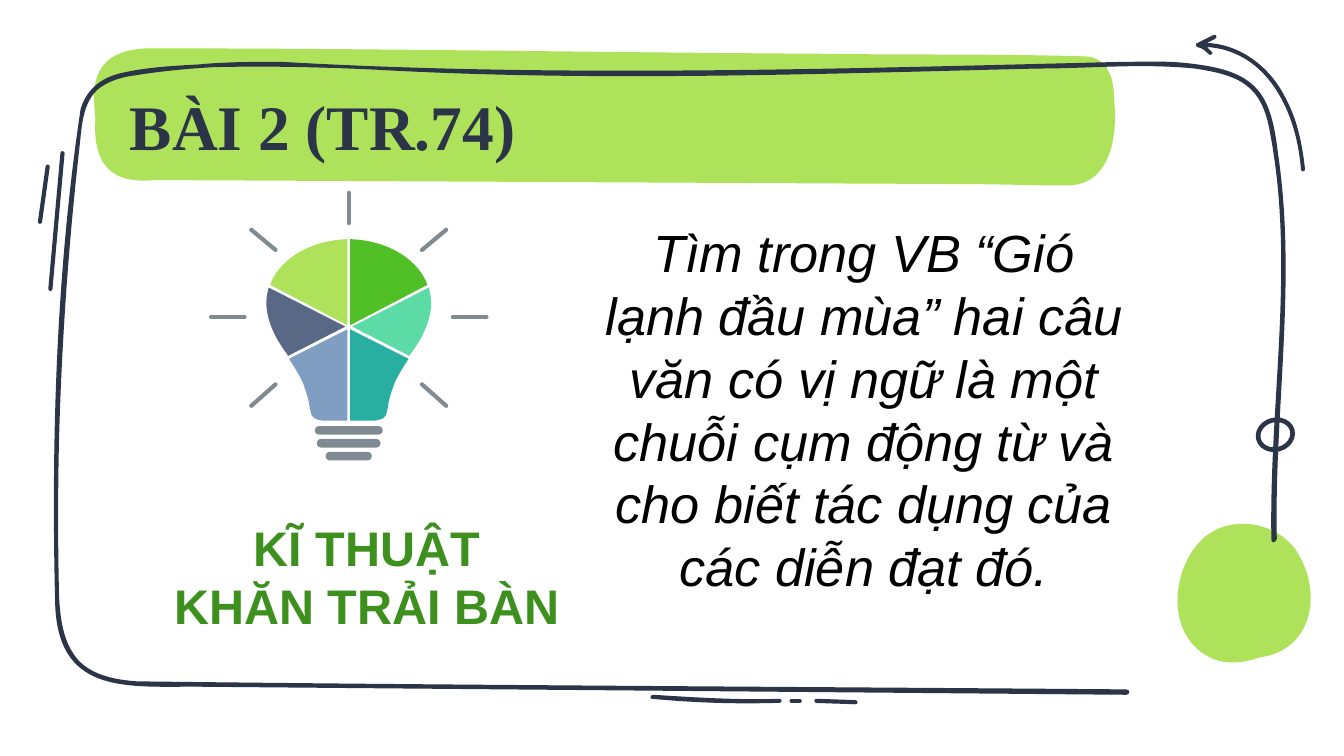
from pptx import Presentation
from pptx.dml.color import RGBColor
from pptx.enum.shapes import MSO_CONNECTOR, MSO_SHAPE
from pptx.enum.text import MSO_ANCHOR, MSO_AUTO_SIZE, PP_ALIGN
from pptx.oxml.ns import qn
from pptx.util import Inches, Pt
from lxml import etree

LEFT, CENTER = PP_ALIGN.LEFT, PP_ALIGN.CENTER
MIDDLE = MSO_ANCHOR.MIDDLE
NO_FIT = MSO_AUTO_SIZE.NONE
STRAIGHT = MSO_CONNECTOR.STRAIGHT
OVAL, ROUNDED = MSO_SHAPE.OVAL, MSO_SHAPE.ROUNDED_RECTANGLE

COLS, ROWS = 100, 56.25
CELL = Inches(10) / COLS
CURVE_STEPS = 12
BULB_AXIS = 25.95
COLORS = {
    "lime": "AEE25A", "ink": "2B3547", "gray": "7F8B91", "slate": "596885",
    "green": "51C026", "mint": "5DDBA7", "blue": "809DC2", "teal": "29AFA2",
    "label": "3D901D", "black": "000000",
}

BLOB = [
    (96.7, 41.4), (95.5, 39, 91.8, 38.1, 89.6, 40),
    (87.1, 42.2, 86.6, 47.4, 90.2, 49), (91.4, 49.5, 92.6, 49.3, 93.8, 48.9),
    (97.5, 48.4, 98.4, 44.4, 96.7, 41.4),
]
BANNER = [
    (82.9, 7.4), (82.9, 5.8, 82.4, 4.3, 80.8, 4.2),
    (74.1, 4, 67.5, 4.1, 60.8, 4), (43.5, 3.9, 28.5, 3.6, 11.2, 3.6),
    (6, 3.6, 7.1, 7.7, 7.1, 8.9), (6.9, 12.5, 8.5, 13.7, 11.6, 13.4),
    (31.6, 13.5), (71.5, 13.7), (74.2, 13.7, 76.8, 13.8, 79.4, 13.8),
    (82.6, 13.8, 83.2, 10.2, 82.9, 7.4),
]
FRAME = [
    (95.1, 11.5), (94.6, 7.2, 93.7, 5.4, 89.1, 4.8),
    (87.1, 4.5, 85.7, 4.6, 83.7, 4.6), (62.8, 5.1, 41.8, 5.8, 20.9, 4.6),
    (18.9, 4.6, 16.8, 4.6, 14.8, 4.8), (12.9, 4.9, 11, 5, 9.2, 5.4),
    (7.7, 5.7, 6.5, 6.5, 6, 8.1), (4.2, 20.1, 3.8, 32.5, 4.1, 44.7),
    (4.2, 51.6, 9.2, 51.1, 14.5, 51.1), (37.5, 51.3, 60.9, 51.5, 83.8, 51.7),
    (84.1, 51.7, 84.1, 51.3, 83.8, 51.3), (59.3, 51.1, 34.7, 51, 10.2, 50.7),
    (8.7, 50.6, 7, 50.3, 5.9, 49.2), (4.7, 47.9, 4.5, 46.1, 4.4, 44.5),
    (4.3, 40.5, 4.3, 36.5, 4.4, 32.5), (4.6, 25.3, 5.1, 18.2, 5.9, 11.1),
    (6.1, 9.4, 6.1, 7.2, 7.8, 6.3), (8.5, 5.9, 9.3, 5.7, 10.1, 5.6),
    (12, 5.3, 14, 5.1, 15.9, 5), (20, 4.9, 24.1, 5, 28.2, 5.2),
    (44.5, 6.1, 60.9, 5.5, 77.2, 5.1), (81.2, 5.1, 84.8, 4.7, 88.9, 5.1),
    (92.2, 5.6, 93.9, 6.3, 94.5, 9.9), (96.4, 19.9, 94.4, 29.9, 94.6, 40.2),
    (94.6, 40.5, 95, 40.3, 95, 40.1), (94.8, 30.6, 96.5, 21, 95.1, 11.5),
]
ARROW = [
    (95.6, 7.2), (94.5, 5, 92.3, 3.3, 89.8, 3.2), (90, 3.1, 90.2, 3, 90.4, 2.9),
    (90.6, 2.8, 90.5, 2.5, 90.3, 2.6), (89.9, 2.8, 89.5, 3, 89.1, 3.2),
    (88.9, 3.2, 89, 3.5, 89.1, 3.5), (89.5, 3.6, 89.7, 3.8, 89.9, 4),
    (90, 4.2, 90.3, 4, 90.2, 3.9), (90, 3.7, 89.9, 3.6, 89.8, 3.5),
    (94.4, 3.8, 96.5, 8.5, 96.8, 12.6), (96.8, 12.8, 97.1, 12.8, 97.1, 12.6),
    (96.9, 10.7, 96.5, 8.8, 95.6, 7.2),
]
UNDERLINE = [
    (58, 52), (54.8, 52.1, 51.7, 51.9, 48.6, 51.7),
    (48.4, 51.7, 48.3, 52, 48.5, 52), (51.7, 52.3, 54.8, 52.4, 58, 52.3),
    (58.2, 52.3, 58.2, 52, 58, 52),
]
DASHES = [
    (58.9, 52.15, 59.5, 52.15), (60.75, 52.15, 63.65, 52.25),
    (4.65, 11.4, 3.75, 21.5), (3.55, 12.4, 2.98, 16.5),
]
RAYS = [(18.7, 17.1, 20.5, 18.6), (15.7, 23.6, 18.2, 23.6), (18.7, 30.2, 20.5, 28.6)]
WEDGES = [
    ("slate", "mint", [
        (20.6, 25.2), (20.9, 25.7, 21.1, 26, 21.4, 26.4), (21.4, 26.5),
        (25.7, 24.3), (20, 21.4), (19.6, 22.6, 19.9, 23.9, 20.6, 25.2)]),
    ("lime", "green", [
        (20.1, 21.2), (25.85, 24.2), (25.85, 17.8),
        (22.8, 17.9, 20.7, 19.5, 20.1, 21.2)]),
    ("blue", "teal", [
        (25.85, 31.3), (25.85, 24.5), (21.5, 26.7),
        (21.9, 27.3, 22.2, 27.8, 22.5, 28.4), (22.7, 28.9, 22.9, 29.5, 23, 30),
        (23, 30.3, 23.1, 30.4, 23.1, 30.6), (23.2, 31.1, 23.4, 31.2, 24, 31.3)]),
]
BASE_WIDTHS = [5.06, 4.74, 3.44]


def grid(*values):
    return [round(v * CELL) for v in values]


def rgb(name):
    return RGBColor.from_string(COLORS[name])


def mirror(numbers):
    return tuple(2 * BULB_AXIS - v if i % 2 == 0 else v for i, v in enumerate(numbers))


def trace(segments):
    points = [segments[0]]
    for seg in segments[1:]:
        if len(seg) == 2:
            points.append(seg)
            continue
        ctrl = [points[-1], seg[:2], seg[2:4], seg[4:]]
        for step in range(1, CURVE_STEPS + 1):
            t = step / CURVE_STEPS
            weights = ((1 - t) ** 3, 3 * t * (1 - t) ** 2, 3 * t * t * (1 - t), t ** 3)
            points.append(tuple(sum(w * c[k] for w, c in zip(weights, ctrl)) for k in (0, 1)))
    return [tuple(grid(*pt)) for pt in points]


def curve_outline(s, segments):
    outline = next(s._element.iter(qn("a:path")))
    for line in outline.findall(qn("a:lnTo")):
        outline.remove(line)
    close = outline.find(qn("a:close"))
    for seg in segments[1:]:
        step = etree.Element(qn("a:lnTo" if len(seg) == 2 else "a:cubicBezTo"))
        close.addprevious(step)
        values = grid(*seg)
        for x, y in zip(values[::2], values[1::2]):
            etree.SubElement(step, qn("a:pt"), x=str(x - s.left), y=str(y - s.top))


def paint(s, color):
    s.fill.solid()
    s.fill.fore_color.rgb = rgb(color)
    s.line.fill.background()
    s.shadow.inherit = False


def add_outline(shapes, segments, color):
    points = trace(segments)
    builder = shapes.build_freeform(*points[0])
    builder.add_line_segments(points[1:], close=True)
    s = builder.convert_to_shape()
    curve_outline(s, segments)
    paint(s, color)


def add_stroke(shapes, ends, color):
    s = shapes.add_connector(STRAIGHT, *grid(*ends))
    s.line.color.rgb = rgb(color)
    s.line.width = Pt(2.25)
    sp_pr = s._element.spPr
    sp_pr.find(qn("a:ln")).set("cap", "rnd")
    etree.SubElement(sp_pr, qn("a:effectLst"))


def add_ring(shapes):
    s = shapes.add_shape(OVAL, *grid(93.6, 31.25, 2.6, 2.2))
    s.rotation = -15
    s.fill.background()
    s.line.color.rgb = rgb("ink")
    s.line.width = Pt(2.5)
    s.shadow.inherit = False


def add_bulb(shapes):
    add_stroke(shapes, (BULB_AXIS, 14.35, BULB_AXIS, 16.6), "gray")
    for ray in RAYS:
        add_stroke(shapes, ray, "gray")
        add_stroke(shapes, mirror(ray), "gray")
    for i, width in enumerate(BASE_WIDTHS):
        s = shapes.add_shape(ROUNDED, *grid(BULB_AXIS - width / 2, 31.7 + 0.96 * i, width, 0.64))
        s.adjustments[0] = 0.5
        paint(s, "gray")
    for left, right, segments in WEDGES:
        add_outline(shapes, segments, left)
        add_outline(shapes, [mirror(seg) for seg in segments], right)


def write(tf, lines, font, size, color, align, bold=False, italic=False):
    tf.word_wrap = True
    tf.text = "\n".join(lines)
    for p in tf.paragraphs:
        p.alignment = align
        p.font.name, p.font.size = font, Pt(size)
        p.font.bold, p.font.italic = bold, italic
        p.font.color.rgb = rgb(color)


def add_title(slide, text):
    title = slide.shapes.title
    title.left, title.top, title.width, title.height = grid(9.66, 7.5, 70.3, 4.3)
    tf = title.text_frame
    write(tf, [text], "Times New Roman", 34, "ink", LEFT, bold=True)
    tf.auto_size = NO_FIT
    tf.vertical_anchor = MIDDLE
    tf.margin_left = tf.margin_right = tf.margin_top = tf.margin_bottom = 0
    tf.paragraphs[0].line_spacing = 0.9
    title._element.getparent().append(title._element)


def add_text(shapes, box, lines, *style, **emphasis):
    write(shapes.add_textbox(*grid(*box)).text_frame, lines, "Arial", *style, **emphasis)


def main():
    prs = Presentation()
    prs.slide_width, prs.slide_height = grid(COLS, ROWS)
    slide = prs.slides.add_slide(prs.slide_layouts[5])
    shapes = slide.shapes
    add_outline(shapes, BLOB, "lime")
    add_outline(shapes, BANNER, "lime")
    for segments in (FRAME, ARROW, UNDERLINE):
        add_outline(shapes, segments, "ink")
    add_ring(shapes)
    for dash in DASHES:
        add_stroke(shapes, dash, "ink")
    add_title(slide, "BÀI 2 (TR.74)")
    add_bulb(shapes.add_group_shape().shapes)
    add_text(shapes, (11.13, 38.06, 32.4, 9.8), ["KĨ THUẬT", "KHĂN TRẢI BÀN"],
             26, "label", CENTER, bold=True)
    task = ("Tìm trong VB “Gió lạnh đầu mùa” hai câu văn có vị ngữ là một chuỗi "
            "cụm động từ và cho biết tác dụng của các diễn đạt đó.")
    add_text(shapes, (43.63, 15.93, 41.3, 29.3), [task], 28, "black", CENTER, italic=True)
    prs.save("out.pptx")


if __name__ == "__main__":
    main()
